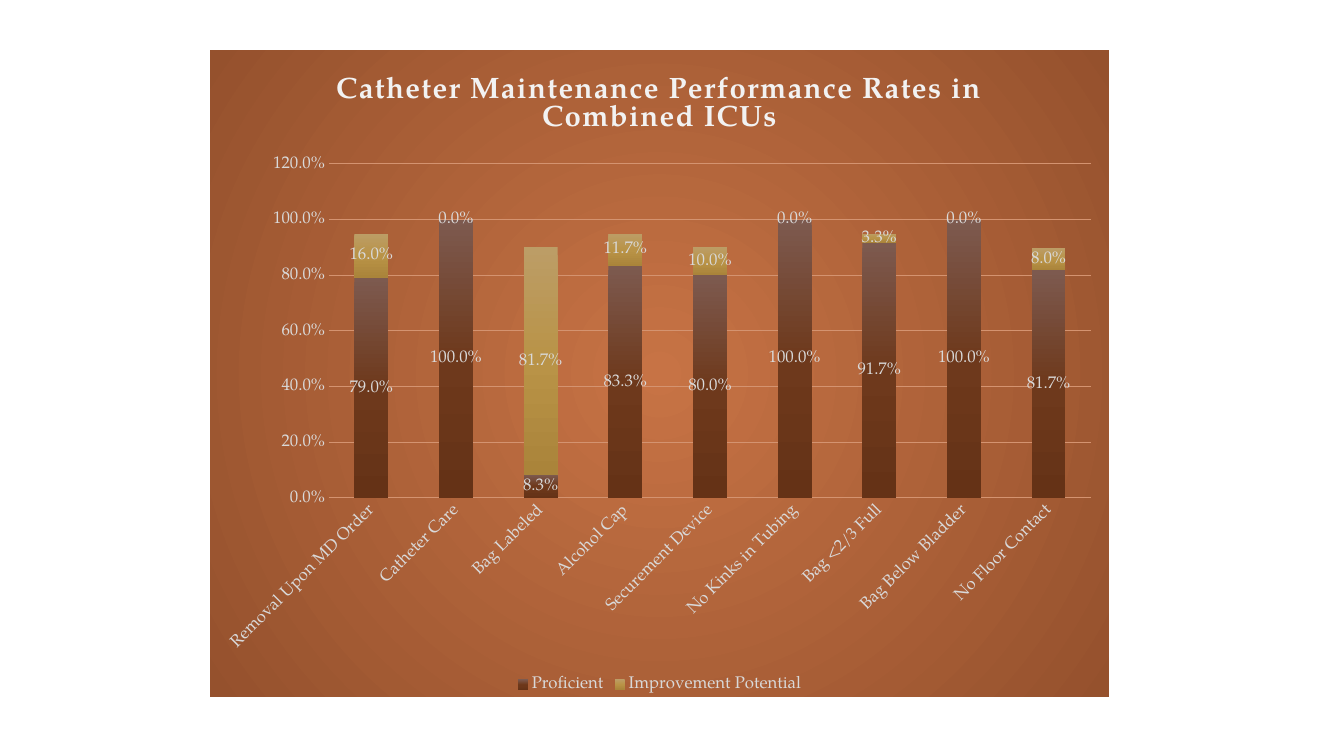
from dataclasses import dataclass

from lxml.etree import SubElement
from pptx import Presentation
from pptx.chart.chart import Chart
from pptx.chart.data import CategoryChartData
from pptx.dml.color import RGBColor
from pptx.enum.chart import XL_CHART_TYPE, XL_LEGEND_POSITION, XL_TICK_MARK
from pptx.oxml import parse_xml
from pptx.oxml.ns import nsdecls, qn
from pptx.util import Emu, Pt

PX = 914400 / 100.8
FONT = "TeX Gyre Pagella"
PERCENT = "0.0%"

TITLE_COLOR = RGBColor(0xF2, 0xF2, 0xF2)
LABEL_COLOR = RGBColor(0xD9, 0xD9, 0xD9)
GRID_COLOR = RGBColor(0xD4, 0x93, 0x70)
PANEL_CENTER = RGBColor(0xC7, 0x73, 0x45)
PANEL_EDGE = RGBColor(0x95, 0x51, 0x2D)
BROWN_STOPS = (RGBColor(0x7D, 0x5A, 0x4F), RGBColor(0x6E, 0x39, 0x1C), RGBColor(0x65, 0x32, 0x16))
GOLD_STOPS = (RGBColor(0xBC, 0x9D, 0x66), RGBColor(0xB9, 0x93, 0x47), RGBColor(0xAA, 0x84, 0x3A))

LINEAR = '<a:lin ang="5400000" scaled="0"/>'
RADIAL = '<a:path path="circle"><a:fillToRect l="50000" t="50000" r="50000" b="50000"/></a:path>'


@dataclass(frozen=True)
class Frame:
    left: int
    top: int
    width: int
    height: int


@dataclass(frozen=True)
class Measure:
    name: str
    rates: tuple[float, ...]
    stops: tuple[RGBColor, ...]


PANEL = Frame(210, 50, 899, 647)
PLOT = Frame(329, 164, 762, 334)
TITLE = "Catheter Maintenance Performance Rates in Combined ICUs"
TASKS = (
    "Removal Upon MD Order", "Catheter Care", "Bag Labeled",
    "Alcohol Cap", "Securement Device", "No Kinks in Tubing",
    "Bag <2/3 Full", "Bag Below Bladder", "No Floor Contact",
)
MEASURES = (
    Measure("Proficient", (0.79, 1, 0.083, 0.833, 0.8, 1, 0.917, 1, 0.817), BROWN_STOPS),
    Measure("Improvement Potential", (0.16, 0, 0.817, 0.117, 0.1, 0, 0.033, 0, 0.08), GOLD_STOPS),
)


def px(length: int) -> Emu:
    return Emu(round(length * PX))


def set_font(font, size: float = 12, color: RGBColor = LABEL_COLOR, bold: bool = False) -> None:
    for name, value in {"name": FONT, "size": Pt(size), "bold": bold}.items():
        setattr(font, name, value)
    font.color.rgb = color


def gradient(stops: tuple[RGBColor, ...], direction: str):
    """Gradient fill with evenly spaced stops."""
    step = 100000 // (len(stops) - 1)
    marks = "".join(
        f'<a:gs pos="{index * step}"><a:srgbClr val="{color}"/></a:gs>'
        for index, color in enumerate(stops)
    )
    return parse_xml(f'<a:gradFill {nsdecls("a")}><a:gsLst>{marks}</a:gsLst>{direction}</a:gradFill>')


def fill_panel(chart: Chart) -> None:
    shape_format = parse_xml(f'<c:spPr {nsdecls("c", "a")}><a:ln><a:noFill/></a:ln></c:spPr>')
    shape_format.insert(0, gradient((PANEL_CENTER, PANEL_EDGE), RADIAL))
    chart._chartSpace.find(qn("c:chart")).addnext(shape_format)


def place_plot(chart: Chart) -> None:
    """Pin the inner plot area as fractions of the panel."""
    area = chart._chartSpace.find(qn("c:chart")).find(qn("c:plotArea"))
    for existing in area.findall(qn("c:layout")):
        area.remove(existing)
    layout = parse_xml(f'<c:layout {nsdecls("c")}><c:manualLayout/></c:layout>')
    settings = {
        "layoutTarget": "inner", "xMode": "edge", "yMode": "edge",
        "x": round((PLOT.left - PANEL.left) / PANEL.width, 4),
        "y": round((PLOT.top - PANEL.top) / PANEL.height, 4),
        "w": round(PLOT.width / PANEL.width, 4),
        "h": round(PLOT.height / PANEL.height, 4),
    }
    for tag, value in settings.items():
        SubElement(layout[0], qn(f"c:{tag}")).set("val", str(value))
    area.insert(0, layout)


def style_title(chart: Chart) -> None:
    chart.has_title = True
    chart.chart_title.include_in_layout = False
    span = chart.chart_title.text_frame.paragraphs[0].add_run()
    span.text = TITLE
    set_font(span.font, 21, TITLE_COLOR, True)
    span.font._element.set("spc", "100")


def style_axes(chart: Chart) -> None:
    for axis in (chart.category_axis, chart.value_axis):
        axis.major_tick_mark = axis.minor_tick_mark = XL_TICK_MARK.NONE
        axis.format.line.fill.background()
        set_font(axis.tick_labels.font)
    labels = chart.category_axis.tick_labels.font._element.getparent().getparent().getparent()
    labels.find(qn("a:bodyPr")).set("rot", "-2700000")

    rates = chart.value_axis
    for name, value in {"minimum_scale": 0, "maximum_scale": 1.2, "major_unit": 0.2}.items():
        setattr(rates, name, value)
    rates.tick_labels.number_format = PERCENT
    rates.tick_labels.number_format_is_linked = False
    rates.has_major_gridlines = True
    grid = rates.major_gridlines.format.line
    grid.color.rgb = GRID_COLOR
    grid.width = Pt(0.75)


def style_series(chart: Chart) -> None:
    plot = chart.plots[0]
    for name, value in {"gap_width": 150, "overlap": 100, "vary_by_categories": False}.items():
        setattr(plot, name, value)
    for series, measure in zip(plot.series, MEASURES):
        series._element.get_or_add_spPr().insert(0, gradient(measure.stops, LINEAR))
        labels = series.data_labels
        for name, value in {"show_value": True, "number_format": PERCENT,
                            "number_format_is_linked": False}.items():
            setattr(labels, name, value)
        set_font(labels.font)


def style_legend(chart: Chart) -> None:
    chart.has_legend = True
    chart.legend.position = XL_LEGEND_POSITION.BOTTOM
    chart.legend.include_in_layout = False
    set_font(chart.legend.font)


def main() -> None:
    deck = Presentation()
    deck.slide_width, deck.slide_height = px(1344), px(756)
    page = deck.slides.add_slide(deck.slide_layouts[6])

    # Performance rates by maintenance task
    data = CategoryChartData(number_format=PERCENT)
    data.categories = TASKS
    for measure in MEASURES:
        data.add_series(measure.name, measure.rates)
    chart = page.shapes.add_chart(
        XL_CHART_TYPE.COLUMN_STACKED,
        px(PANEL.left), px(PANEL.top), px(PANEL.width), px(PANEL.height), data,
    ).chart

    # Chart styling
    set_font(chart.font)
    for style in (fill_panel, place_plot, style_title, style_axes, style_series, style_legend):
        style(chart)

    deck.save("out.pptx")


if __name__ == "__main__":
    main()
